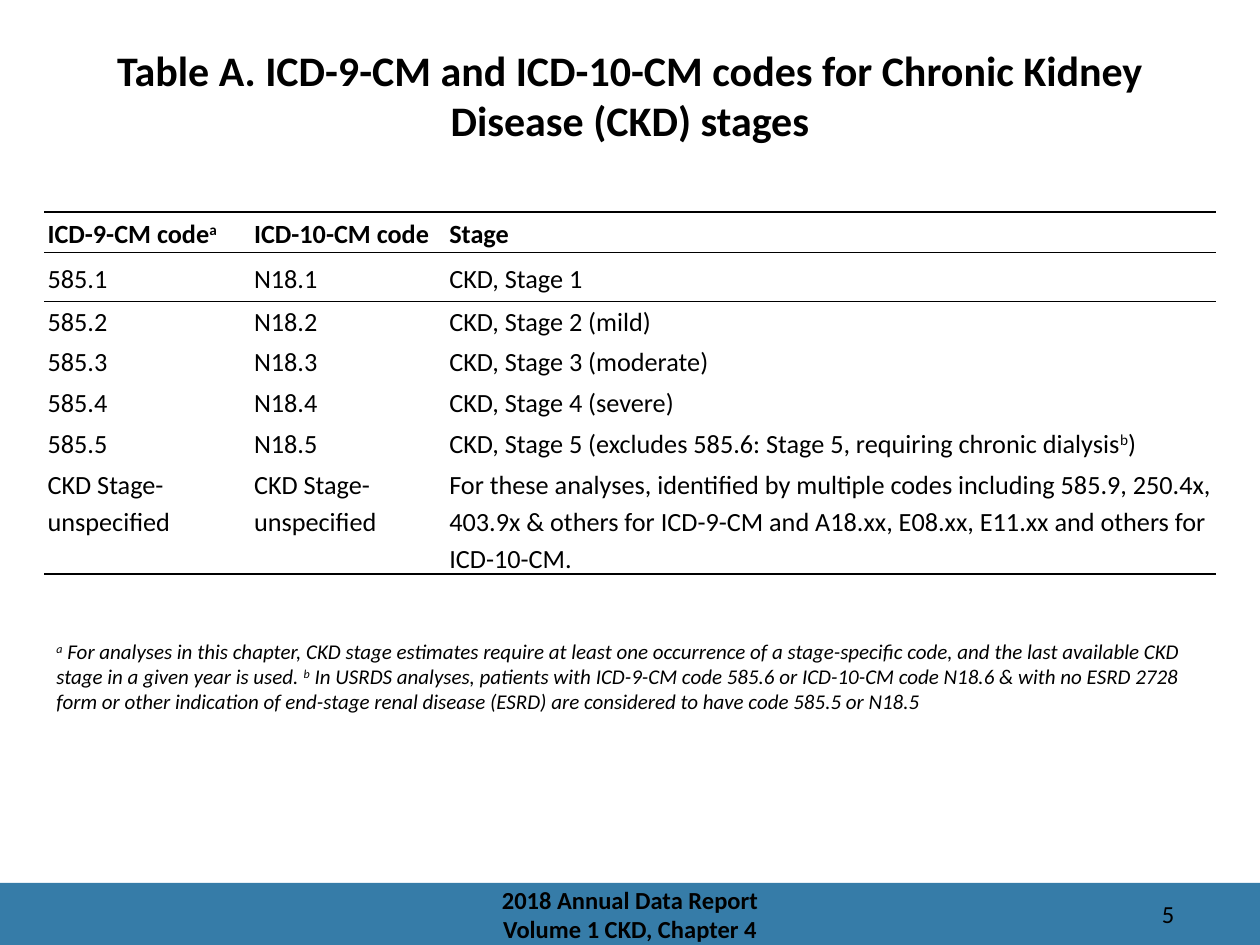
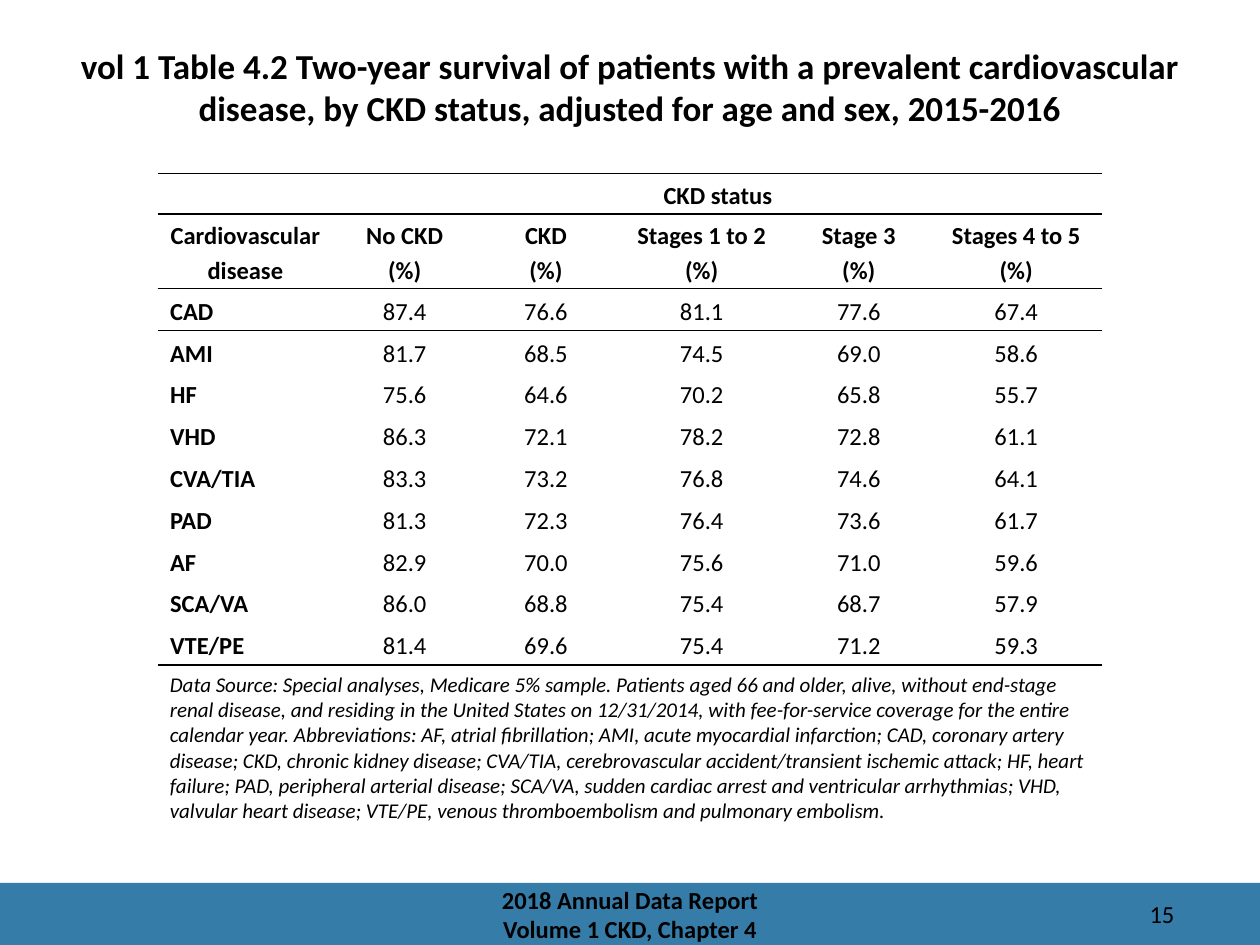
"""Build two table slides on chronic kidney disease codes and survival."""
from lxml import etree
from pptx import Presentation
from pptx import util as u
from pptx.dml.color import RGBColor
from pptx.enum import shapes, text
from pptx.oxml.ns import qn

COLORS = {"ink": "000000", "band": "367CA8"}
FONT = "Calibri"
PLAIN_STYLE = "{2D5ABB26-0587-4C30-8999-92F81FD0307C}"
FOOTER = ["2018 Annual Data Report", "Volume 1 CKD, Chapter 4"]
LEFT, CENTER, RIGHT = text.PP_ALIGN.LEFT, text.PP_ALIGN.CENTER, text.PP_ALIGN.RIGHT
TOP, MIDDLE = text.MSO_ANCHOR.TOP, text.MSO_ANCHOR.MIDDLE

CODES = {
    "title": "Table A. ICD-9-CM and ICD-10-CM codes for Chronic Kidney Disease (CKD) stages",
    "title_size": 24,
    "number": "5",
    "note": "^a^ For analyses in this chapter, CKD stage estimates require at least one occurrence of a "
            "stage-specific code, and the last available CKD stage in a given year is used. ^b^ In USRDS "
            "analyses, patients with ICD-9-CM code 585.6 or ICD-10-CM code N18.6 & with no ESRD 2728 form "
            "or other indication of end-stage renal disease (ESRD) are considered to have code 585.5 or N18.5",
    "note_place": (25.2, 361.4, 669.6, 42),
    "rows": [
        ("ICD-9-CM code^a^", "ICD-10-CM code", "Stage"),
        ("585.1", "N18.1", "CKD, Stage 1"),
        ("585.2", "N18.2", "CKD, Stage 2 (mild)"),
        ("585.3", "N18.3", "CKD, Stage 3 (moderate)"),
        ("585.4", "N18.4", "CKD, Stage 4 (severe)"),
        ("585.5", "N18.5", "CKD, Stage 5 (excludes 585.6: Stage 5, requiring chronic dialysis^b^)"),
        ("CKD Stage-unspecified", "CKD Stage-unspecified",
         "For these analyses, identified by multiple codes including 585.9, 250.4x, 403.9x & others for "
         "ICD-9-CM and A18.xx, E08.xx, E11.xx and others for ICD-10-CM."),
    ],
    "corner": (25.2, 121),
    "widths": [118, 111.6, 440],
    "heights": [23.3, 28] + [23.3] * 4 + [62.8],
    "size": 15,
    "inset": 2,
    "heads": 1,
    "spanned": False,
    "after": 10,
}

SURVIVAL = {
    "title": "vol 1 Table 4.2 Two-year survival of patients with a prevalent cardiovascular disease, "
             "by CKD status, adjusted for age and sex, 2015-2016",
    "title_size": 20,
    "number": "15",
    "note": "Data Source: Special analyses, Medicare 5% sample. Patients aged 66 and older, alive, without "
            "end-stage renal disease, and residing in the United States on 12/31/2014, with fee-for-service "
            "coverage for the entire calendar year. Abbreviations: AF, atrial fibrillation; AMI, acute "
            "myocardial infarction; CAD, coronary artery disease; CKD, chronic kidney disease; CVA/TIA, "
            "cerebrovascular accident/transient ischemic attack; HF, heart failure; PAD, peripheral arterial "
            "disease; SCA/VA, sudden cardiac arrest and ventricular arrhythmias; VHD, valvular heart disease; "
            "VTE/PE, venous thromboembolism and pulmonary embolism.",
    "note_place": (90, 380.2, 540, 96),
    "rows": [
        ("", "CKD status"),
        ("Cardiovascular disease", "No CKD\n(%)", "CKD\n(%)", "Stages 1 to 2\n(%)", "Stage 3\n(%)",
         "Stages 4 to 5\n(%)"),
        ("CAD", "87.4", "76.6", "81.1", "77.6", "67.4"),
        ("AMI", "81.7", "68.5", "74.5", "69.0", "58.6"),
        ("HF", "75.6", "64.6", "70.2", "65.8", "55.7"),
        ("VHD", "86.3", "72.1", "78.2", "72.8", "61.1"),
        ("CVA/TIA", "83.3", "73.2", "76.8", "74.6", "64.1"),
        ("PAD", "81.3", "72.3", "76.4", "73.6", "61.7"),
        ("AF", "82.9", "70.0", "75.6", "71.0", "59.6"),
        ("SCA/VA", "86.0", "68.8", "75.4", "68.7", "57.9"),
        ("VTE/PE", "81.4", "69.6", "75.4", "71.2", "59.3"),
    ],
    "corner": (90, 99.2),
    "widths": [100.5, 81.5, 80, 98, 81.5, 98.5],
    "heights": [23, 42.8] + [23.9] * 9,
    "size": 14,
    "inset": 7.2,
    "heads": 2,
    "spanned": True,
    "after": 0,
}


def points(values):
    return [u.Pt(value) for value in values]


def write(para, words, size, align=LEFT, bold=False, italic=False):
    parts = words.split("^")
    para.text = parts[0]
    para.alignment = align
    for index, part in enumerate(parts[1:], 1):
        span = para.add_run()
        span.text = part
        if index % 2:
            span.font._element.set("baseline", "30000")
    for span in para.runs:
        font = span.font
        font.name, font.size, font.bold, font.italic = FONT, u.Pt(size), bold, italic
        font.color.rgb = RGBColor.from_string(COLORS["ink"])
    for line_break in para._p.findall(qn("a:br")):
        etree.SubElement(line_break, qn("a:rPr")).set("sz", str(size * 100))
    if not words:
        etree.SubElement(para._p, qn("a:endParaRPr")).set("sz", str(size * 100))


def add_text(page, place, lines, size, anchor=TOP, **style):
    frame = page.shapes.add_textbox(*points(place)).text_frame
    frame.word_wrap = True
    frame.vertical_anchor = anchor
    frame.text = "\n".join(lines)
    for para, line in zip(frame.paragraphs, lines):
        write(para, line, size, **style)


def add_rule(cell, side):
    line = etree.SubElement(cell._tc.get_or_add_tcPr(), qn(f"a:{side}"), w=str(u.Pt(1)))
    fill = etree.SubElement(line, qn("a:solidFill"))
    etree.SubElement(fill, qn("a:srgbClr"), val=COLORS["ink"])


def add_grid(page, content):
    rows, widths, heights = content["rows"], content["widths"], content["heights"]
    place = (*content["corner"], sum(widths), sum(heights))
    table = page.shapes.add_table(len(rows), len(widths), *points(place)).table
    table.first_row = table.horz_banding = False
    table._tbl.tblPr.find(qn("a:tableStyleId")).text = PLAIN_STYLE
    for column, width in zip(table.columns, widths):
        column.width = u.Pt(width)
    for row, height in zip(table.rows, heights):
        row.height = u.Pt(height)
    heads, spanned = content["heads"], content["spanned"]
    if spanned:
        table.cell(0, 1).merge(table.cell(0, len(widths) - 1))
    ruled = {*range(heads), len(rows) - 1}
    for r in range(len(rows)):
        for c in range(len(widths)):
            cell = table.cell(r, c)
            if r == 0 or r - 1 in ruled:
                add_rule(cell, "lnT")
            if r in ruled:
                add_rule(cell, "lnB")
            cell.fill.background()
            cell.margin_left = cell.margin_right = u.Pt(content["inset"])
            cell.margin_top = cell.margin_bottom = 0
            cell.vertical_anchor = MIDDLE if spanned or r <= heads else TOP
            para = cell.text_frame.paragraphs[0]
            para.line_spacing = 1.15
            if content["after"] and r >= heads:
                para.space_after = u.Pt(content["after"])
            centered = spanned and (r < heads or c > 0)
            write(para, rows[r][c] if c < len(rows[r]) else "", content["size"],
                  align=CENTER if centered else LEFT,
                  bold=r < heads or spanned and c == 0)


def add_page(deck, content):
    page = deck.slides.add_slide(deck.slide_layouts[6])
    band = page.shapes.add_shape(shapes.MSO_SHAPE.RECTANGLE, *points((0, 504.5, 720, 35.5)))
    band.shadow.inherit = False
    band.fill.solid()
    band.fill.fore_color.rgb = RGBColor.from_string(COLORS["band"])
    band.line.fill.background()
    add_text(page, (606.2, 510, 72, 21.6), [content["number"]], 14, align=RIGHT)
    add_text(page, content["note_place"], [content["note"]], 12, italic=True)
    add_text(page, (36, 21.6, 648, 44.6), [content["title"]], content["title_size"],
             align=CENTER, bold=True)
    add_grid(page, content)
    add_text(page, (238.3, 504.7, 243.4, 35.3), FOOTER, 14, MIDDLE, align=CENTER, bold=True)


def main():
    deck = Presentation()
    deck.slide_width, deck.slide_height = points((720, 540))
    for content in (CODES, SURVIVAL):
        add_page(deck, content)
    deck.save("out.pptx")


if __name__ == "__main__":
    main()
